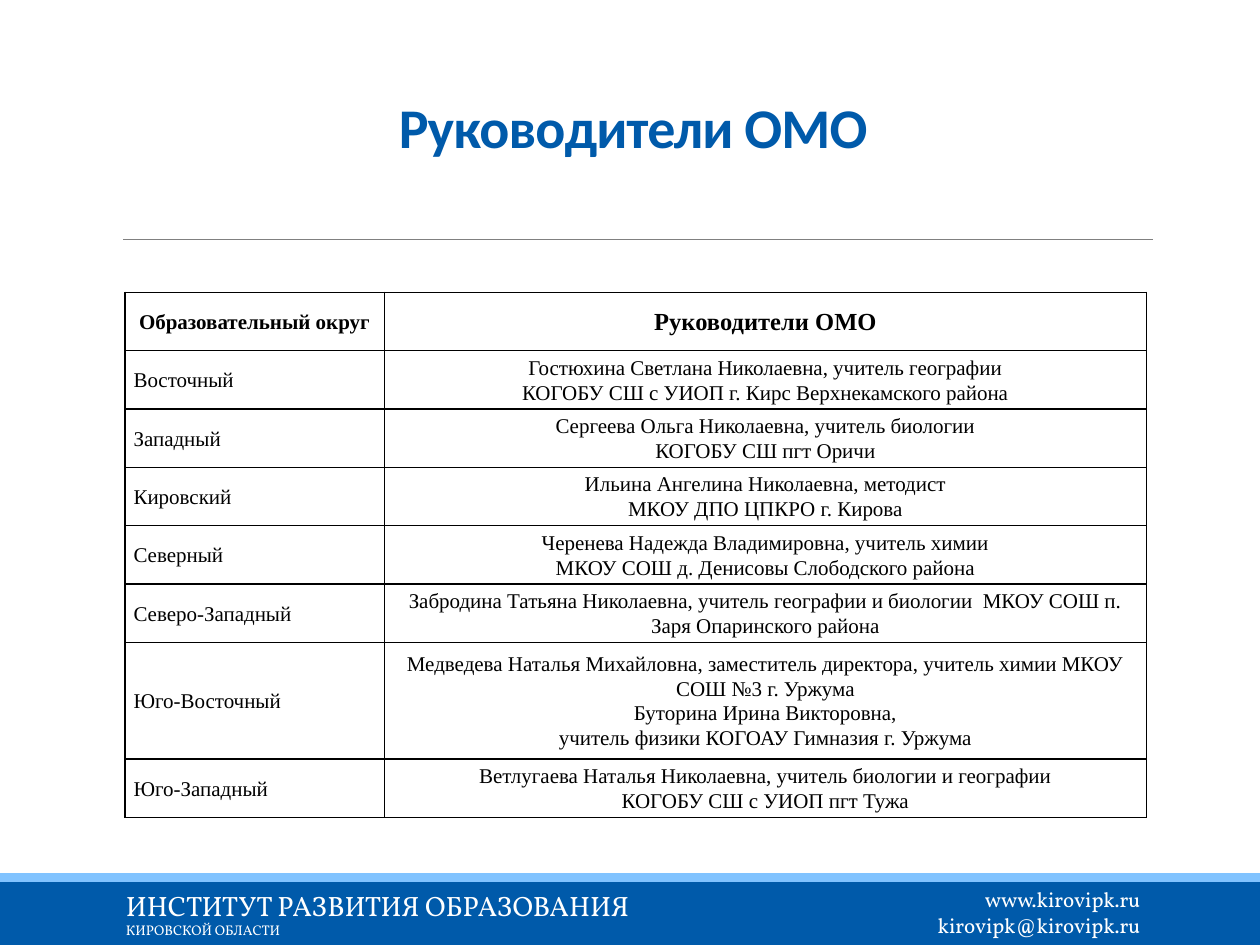
from copy import deepcopy

from lxml.etree import SubElement
from pptx import Presentation
from pptx.dml.color import RGBColor
from pptx.enum.shapes import MSO_CONNECTOR, MSO_SHAPE
from pptx.enum.text import MSO_ANCHOR, PP_ALIGN
from pptx.oxml.ns import qn
from pptx.util import Inches, Pt

COLORS = {"blue": "005AAA", "light blue": "81C3FF", "gray": "808080",
          "black": "000000", "white": "FFFFFF"}

TITLE = "Руководители ОМО"
HEADER = ("Образовательный округ", "Руководители ОМО")
HEADER_SIZES = (12, 14)
DISTRICTS = [
    ("Восточный", "Гостюхина Светлана Николаевна, учитель географии\n"
                  "КОГОБУ СШ с УИОП г. Кирс Верхнекамского района"),
    ("Западный", "Сергеева Ольга Николаевна, учитель биологии\n"
                 "КОГОБУ СШ пгт Оричи"),
    ("Кировский", "Ильина Ангелина Николаевна, методист\n"
                  "МКОУ ДПО ЦПКРО г. Кирова"),
    ("Северный", "Черенева Надежда Владимировна, учитель химии\n"
                 "МКОУ СОШ д. Денисовы Слободского района"),
    ("Северо-Западный", "Забродина Татьяна Николаевна, учитель географии и биологии  "
                        "МКОУ СОШ п. Заря Опаринского района"),
    ("Юго-Восточный", "Медведева Наталья Михайловна, заместитель директора, "
                      "учитель химии МКОУ СОШ №3 г. Уржума\n"
                      "Буторина Ирина Викторовна,\n"
                      "учитель физики КОГОАУ Гимназия г. Уржума"),
    ("Юго-Западный", "Ветлугаева Наталья Николаевна, учитель биологии и географии\n"
                     "КОГОБУ СШ с УИОП пгт Тужа"),
]
INSTITUTE = "ИНСТИТУТ РАЗВИТИЯ ОБРАЗОВАНИЯ\vКИРОВСКОЙ ОБЛАСТИ"
CONTACTS = "www.kirovipk.ru\nkirovipk@kirovipk.ru"

COLUMN_WIDTHS = (2.06, 6.05)
ROW_HEIGHT = 0.463
TALL_DISTRICT = "Юго-Восточный"


def color(name):
    return RGBColor.from_string(COLORS[name])


def add_band(slide, top, height, fill):
    band = slide.shapes.add_shape(MSO_SHAPE.RECTANGLE, 0, Inches(top),
                                  Inches(10), Inches(height))
    band.shadow.inherit = False
    band.fill.solid()
    band.fill.fore_color.rgb = color(fill)
    band.line.fill.background()


def add_rule(slide):
    rule = slide.shapes.add_connector(MSO_CONNECTOR.STRAIGHT, Inches(0.98), Inches(1.9),
                                      Inches(9.15), Inches(1.9))
    rule.line.color.rgb = color("gray")
    rule.line.width = Pt(0.5)
    SubElement(rule._element.spPr, qn("a:effectLst"))


def format_text(text_frame, font_name, size, font_color, bold=False,
                alignment=PP_ALIGN.LEFT, line_spacing=1.0):
    for paragraph in text_frame.paragraphs:
        paragraph.alignment = alignment
        paragraph.line_spacing = line_spacing
        for run in paragraph.runs:
            run.font.name = font_name
            run.font.size = Pt(size)
            run.font.bold = bold
            run.font.color.rgb = color(font_color)


def add_text(slide, box, text, *style, **options):
    text_frame = slide.shapes.add_textbox(*map(Inches, box)).text_frame
    text_frame.word_wrap = True
    text_frame.text = text
    format_text(text_frame, *style, **options)
    return text_frame


def add_borders(cell):
    properties = cell._tc.get_or_add_tcPr()
    for position, side in enumerate(("a:lnL", "a:lnR", "a:lnT", "a:lnB")):
        border = SubElement(properties, qn(side), w=str(Pt(1)))
        fill = SubElement(border, qn("a:solidFill"))
        SubElement(fill, qn("a:srgbClr"), val=COLORS["black"])
        properties.insert(position, border)


def add_leaders_table(slide):
    rows = [HEADER] + DISTRICTS
    heights = [ROW_HEIGHT * (2 if row[0] == TALL_DISTRICT else 1) for row in rows]
    table = slide.shapes.add_table(
        len(rows), len(COLUMN_WIDTHS), Inches(0.99), Inches(2.32),
        Inches(sum(COLUMN_WIDTHS)), Inches(sum(heights))).table
    for column, width in zip(table.columns, COLUMN_WIDTHS):
        column.width = Inches(width)
    for row_index, (row, height) in enumerate(zip(rows, heights)):
        table.rows[row_index].height = Inches(height)
        is_header = row_index == 0
        for column_index, text in enumerate(row):
            cell = table.cell(row_index, column_index)
            cell.text = text
            cell.vertical_anchor = MSO_ANCHOR.MIDDLE
            cell.margin_left = cell.margin_right = Inches(0.07)
            cell.margin_top = cell.margin_bottom = 0
            cell.fill.background()
            add_borders(cell)
            centered = is_header or column_index == 1
            format_text(cell.text_frame, "Times New Roman",
                        HEADER_SIZES[column_index] if is_header else 12, "black",
                        bold=is_header, line_spacing=1.07,
                        alignment=PP_ALIGN.CENTER if centered else PP_ALIGN.LEFT)


def add_footer(slide):
    add_band(slide, 7, 0.5, "blue")
    add_band(slide, 6.93, 0.07, "light blue")
    add_text(slide, (7.27, 6.99, 1.88, 0.5), CONTACTS, "Vollkorn", 12, "white",
             alignment=PP_ALIGN.RIGHT)
    institute = add_text(slide, (0.9, 7, 4.38, 0.5), INSTITUTE, "Vollkorn", 16, "white")
    name, region = institute.paragraphs[0].runs
    # The line break takes the size of the name, so the first line keeps its height.
    line_break = institute.paragraphs[0]._p.find(qn("a:br"))
    line_break.append(deepcopy(name._r.rPr))
    region.font.size = Pt(8)


def add_title(slide):
    title = add_text(slide, (0.9, 0.66, 8.25, 0.66), TITLE, "Calibri", 32, "blue",
                     bold=True, alignment=PP_ALIGN.CENTER, line_spacing=0.85)
    title.vertical_anchor = MSO_ANCHOR.BOTTOM
    title.paragraphs[0].runs[0]._r.rPr.set("spc", "-50")


def main():
    presentation = Presentation()
    presentation.slide_width = Inches(10)
    presentation.slide_height = Inches(7.5)
    slide = presentation.slides.add_slide(presentation.slide_layouts[6])
    add_footer(slide)
    add_rule(slide)
    add_title(slide)
    add_leaders_table(slide)
    presentation.save("out.pptx")


if __name__ == "__main__":
    main()
